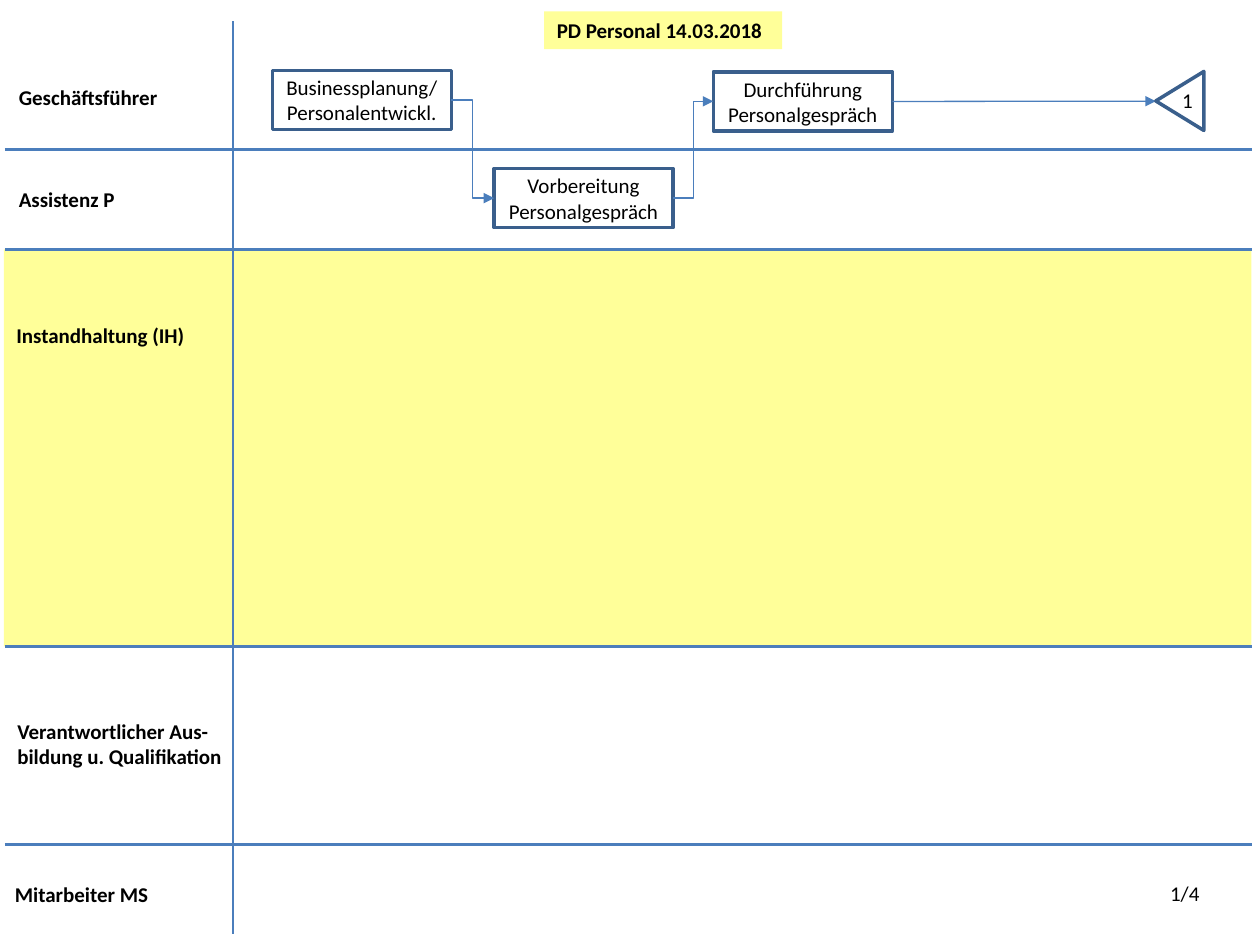
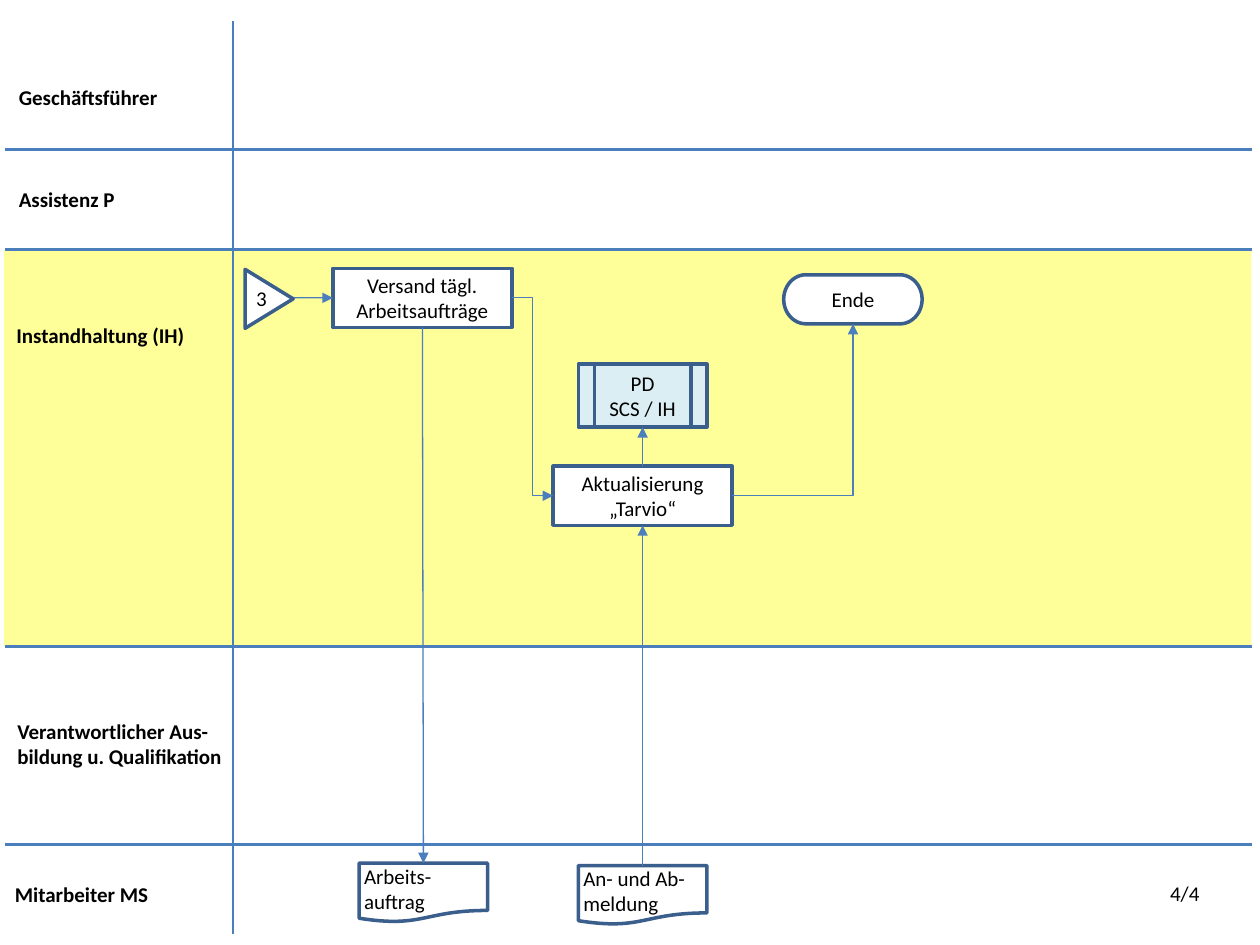
"""Builds two swimlane slides of the personnel process."""
from lxml.etree import SubElement
from pptx import Presentation
from pptx.dml.color import RGBColor
from pptx.enum.shapes import MSO_CONNECTOR, MSO_SHAPE as SHAPE
from pptx.enum.text import MSO_ANCHOR as ANCHOR, MSO_AUTO_SIZE, PP_ALIGN as ALIGN
from pptx.oxml.ns import qn
from pptx.shapes.autoshape import Shape
from pptx.util import Cm, Pt

rgb = RGBColor.from_string
FONT, SIZE = "Calibri", Pt(12)
BLACK, WHITE, YELLOW, PALE_BLUE = "000000", "FFFFFF", "FFFF99", "DBEEF4"
OUTLINE, LINK = "3A5F8C", "4B7EBC"
STEP_SIZE = (3.61, 1.19)
SMALL_SIZE = (2.59, 1.19)
TRIANGLE_SIZE = (1.19, 0.97)
NUMBER_SIZE = (0.74, 0.76)


def draw(slide, preset, box, text="", fill=WHITE, outline=OUTLINE, align=ALIGN.CENTER, bold=False):
    """Draws a preset shape, or a plain text box when preset is None."""
    place = [Cm(length) for length in box]
    if preset is None:
        shape = slide.shapes.add_textbox(*place)
    else:
        shape = slide.shapes.add_shape(preset, *place)
        shape.shadow.inherit = False
        if fill:
            shape.fill.solid()
            shape.fill.fore_color.rgb = rgb(fill)
        else:
            shape.fill.background()
        if outline:
            shape.line.color.rgb = rgb(outline)
            shape.line.width = Pt(2)
        else:
            shape.line.fill.background()
    if text:
        frame = shape.text_frame
        frame.text = text
        frame.word_wrap = True
        frame.margin_left = frame.margin_right = Cm(0.1)
        frame.margin_top = frame.margin_bottom = 0
        frame.vertical_anchor = ANCHOR.TOP if align == ALIGN.LEFT else ANCHOR.MIDDLE
        for paragraph in frame.paragraphs:
            paragraph.alignment = align
            paragraph.font.name, paragraph.font.size = FONT, SIZE
            paragraph.font.bold = bold
            paragraph.font.color.rgb = rgb(BLACK)
    return shape


def link(slide, start, end, preset="line", width=0.75, arrow=True):
    """Draws a line between two ends, each a point or a shape with its side."""
    line = slide.shapes.add_connector(MSO_CONNECTOR.STRAIGHT, 0, 0, 0, 0)
    if isinstance(start[0], Shape):
        line.begin_connect(*start)
    else:
        line.begin_x, line.begin_y = Cm(start[0]), Cm(start[1])
    if isinstance(end[0], Shape):
        line.end_connect(*end)
    else:
        line.end_x, line.end_y = Cm(end[0]), Cm(end[1])
    line.line.color.rgb = rgb(LINK)
    line.line.width = Pt(width)
    properties = line._element.spPr
    properties.find(qn("a:prstGeom")).set("prst", preset)
    if arrow:
        SubElement(properties.find(qn("a:ln")), qn("a:tailEnd"), type="triangle")
    SubElement(properties, qn("a:effectLst"))


deck = Presentation()
deck.slide_width, deck.slide_height = Cm(25.4), Cm(19.05)
TITLE_ONLY, BLANK = deck.slide_layouts[5], deck.slide_layouts[6]
planning_slide = deck.slides.add_slide(TITLE_ONLY)
orders_slide = deck.slides.add_slide(BLANK)

lanes = [
    ("Geschäftsführer", 0.28, 1.7),
    ("Assistenz P", 0.28, 3.76),
    ("Instandhaltung (IH)", 0.23, 6.5),
    ("Verantwortlicher Aus-\nbildung u. Qualifikation", 0.25, 14.48),
    ("Mitarbeiter MS", 0.2, 17.78),
]
for slide, page in ((planning_slide, "1/4"), (orders_slide, "4/4")):
    draw(slide, SHAPE.RECTANGLE, (0.08, 5.03, 25.15, 8), fill=YELLOW, outline=None)
    for y in (3.02, 5.03, 13.03, 17.02):
        link(slide, (0.1, y), (25.24, y), width=1.5, arrow=False)
    link(slide, (4.7, 18.82), (4.7, 0.43), width=1.5, arrow=False)
    for role, x, y in lanes:
        height = 0.51 * (1 + role.count("\n"))
        draw(slide, None, (x, y, 4.9, height), role, align=ALIGN.LEFT, bold=True)
    draw(slide, None, (23.32, 17.5, 0.96, 1.02), page, align=ALIGN.RIGHT)

title = planning_slide.shapes.title
title.left, title.top, title.width, title.height = Cm(10.97), Cm(0.23), Cm(4.8), Cm(0.76)
title.fill.solid()
title.fill.fore_color.rgb = rgb(YELLOW)
title.text_frame.text = "PD Personal 14.03.2018"
title.text_frame.auto_size = MSO_AUTO_SIZE.NONE
title.text_frame.word_wrap = True
title.text_frame.vertical_anchor = ANCHOR.MIDDLE
heading = title.text_frame.paragraphs[0]
heading.alignment = ALIGN.LEFT
heading.font.name, heading.font.size, heading.font.bold = FONT, SIZE, True
heading.font.color.rgb = rgb(BLACK)

planning, preparation, interview = [
    draw(planning_slide, SHAPE.FLOWCHART_PROCESS, (x, y, *STEP_SIZE), step)
    for step, x, y in (
        ("Businessplanung/\nPersonalentwickl.", 5.49, 1.42),
        ("Vorbereitung\nPersonalgespräch", 9.96, 3.4),
        ("Durchführung\nPersonalgespräch", 14.38, 1.45),
    )
]
link(planning_slide, (planning, 3), (preparation, 1), "bentConnector3")
link(planning_slide, (preparation, 3), (interview, 1), "bentConnector3")
link(planning_slide, (interview, 3), (23.3, 2.04))

dispatch, update = [
    draw(orders_slide, SHAPE.FLOWCHART_PROCESS, (x, y, *STEP_SIZE), step)
    for step, x, y in (
        ("Versand tägl.\nArbeitsaufträge", 6.71, 5.41),
        ("Aktualisierung\n„Tarvio“", 11.15, 9.4),
    )
]
work_order, sign_on = [
    draw(orders_slide, SHAPE.FLOWCHART_DOCUMENT, (x, y, *SMALL_SIZE), document,
         fill=None, align=ALIGN.LEFT)
    for document, x, y in (
        ("Arbeits-\nauftrag", 7.24, 17.4),
        ("An- und Ab-\nmeldung", 11.66, 17.45),
    )
]
subprocess_scs = draw(orders_slide, SHAPE.FLOWCHART_PREDEFINED_PROCESS,
                      (11.66, 7.34, 2.59, 1.27), "PD\nSCS / IH", fill=PALE_BLUE)
finish = draw(orders_slide, SHAPE.FLOWCHART_TERMINATOR, (15.8, 5.54, 2.79, 0.99), "Ende")
link(orders_slide, (5.9, 6), (dispatch, 1))
link(orders_slide, (dispatch, 2), (work_order, 0))
link(orders_slide, (dispatch, 3), (update, 1), "bentConnector3")
link(orders_slide, (sign_on, 0), (update, 2))
link(orders_slide, (update, 0), (subprocess_scs, 2))
link(orders_slide, (update, 3), (finish, 2), "bentConnector2")

for slide, number, turn, corner, number_corner in (
    (planning_slide, "1", 270, (23.19, 1.55), (23.57, 1.63)),
    (orders_slide, "3", 90, (4.83, 5.54), (4.9, 5.64)),
):
    draw(slide, SHAPE.FLOWCHART_EXTRACT, (*corner, *TRIANGLE_SIZE)).rotation = turn
    draw(slide, None, (*number_corner, *NUMBER_SIZE), number)

deck.save("out.pptx")
